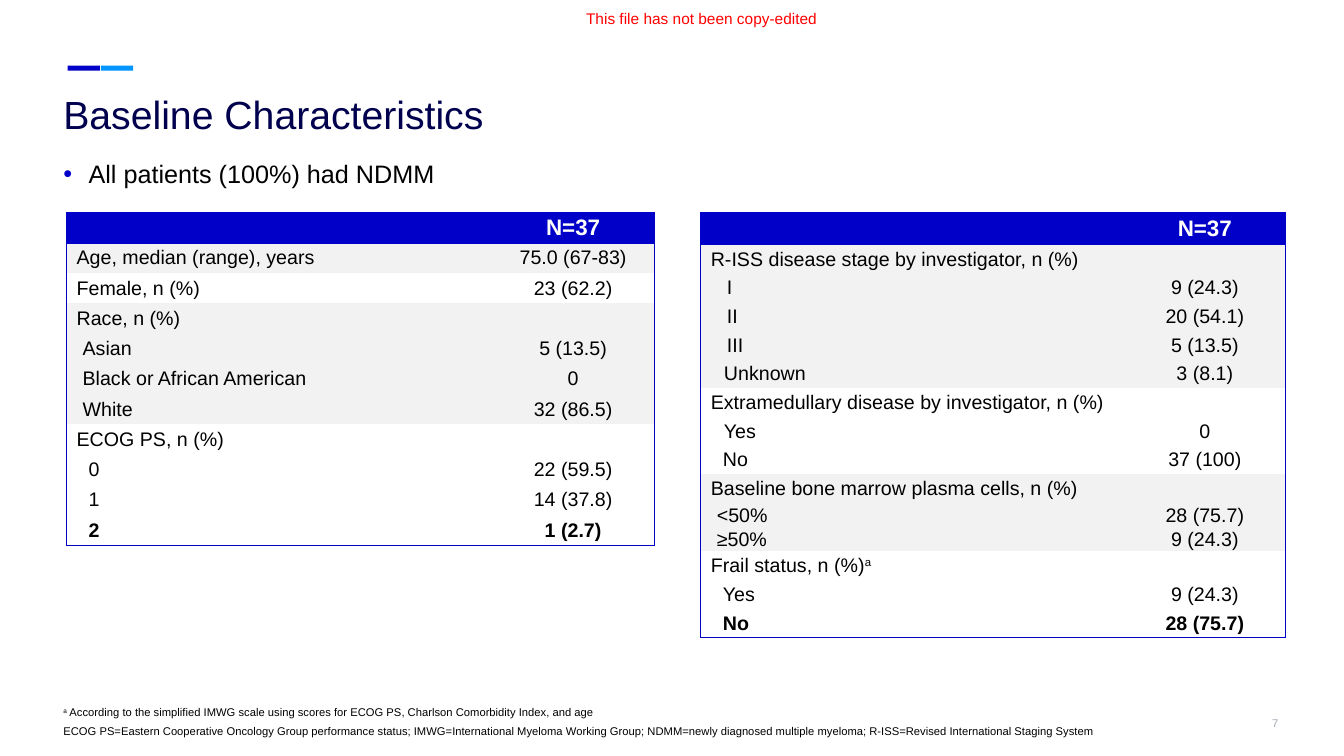
from lxml import etree
from pptx import Presentation
from pptx.dml.color import RGBColor
from pptx.enum.shapes import MSO_SHAPE
from pptx.enum.text import MSO_ANCHOR, PP_ALIGN
from pptx.oxml.ns import qn
from pptx.util import Inches, Pt

RECT = MSO_SHAPE.RECTANGLE
TOP, MIDDLE, BOTTOM = MSO_ANCHOR.TOP, MSO_ANCHOR.MIDDLE, MSO_ANCHOR.BOTTOM
LEFT, CENTER, RIGHT = PP_ALIGN.LEFT, PP_ALIGN.CENTER, PP_ALIGN.RIGHT
PLAIN_STYLE = "{2D5ABB26-0587-4C30-8999-92F81FD0307C}"
COLORS = {
    "blue": "0000C9", "sky": "0095FF", "navy": "00004E", "red": "FF0000",
    "gray": "A1AAB1", "shade": "F2F2F2", "white": "FFFFFF", "black": "000000",
}

# Groups of (label, indent in inches, value); groups alternate in fill.
PATIENTS = [
    [("Age, median (range), years", 0, "75.0 (67-83)")],
    [("Female, n (%)", 0, "23 (62.2)")],
    [("Race, n (%)", 0, ""),
     ("Asian", 0.06, "5 (13.5)"),
     ("Black or African American", 0.06, "0"),
     ("White", 0.06, "32 (86.5)")],
    [("ECOG PS, n (%)", 0, ""),
     ("0", 0.12, "22 (59.5)"),
     ("1", 0.12, "14 (37.8)"),
     ("2", 0.12, "1 (2.7)")],
]
DISEASE = [
    [("R-ISS disease stage by investigator, n (%)", 0, ""),
     ("I", 0.16, "9 (24.3)"),
     ("II", 0.16, "20 (54.1)"),
     ("III", 0.16, "5 (13.5)"),
     ("Unknown", 0.13, "3 (8.1)")],
    [("Extramedullary disease by investigator, n (%)", 0, ""),
     ("Yes", 0.13, "0"),
     ("No", 0.12, "37 (100)")],
    [("Baseline bone marrow plasma cells, n (%)", 0, ""),
     ("<50%", 0.06, "28 (75.7)"),
     ("≥50%", 0.06, "9 (24.3)")],
    [("Frail status, n (%)^a", 0, ""),
     ("Yes", 0.12, "9 (24.3)"),
     ("No", 0.12, "28 (75.7)")],
]
NOTES = [
    "^a^ According to the simplified IMWG scale using scores for ECOG PS, "
    "Charlson Comorbidity Index, and age",
    "ECOG PS=Eastern Cooperative Oncology Group performance status; "
    "IMWG=International Myeloma Working Group; NDMM=newly diagnosed multiple "
    "myeloma; R-ISS=Revised International Staging System",
]


def rgb(name):
    return RGBColor.from_string(COLORS[name])


def write(para, text, size, color, align=LEFT, bold=False):
    """Fill a paragraph; text between carets is superscript."""
    para.alignment = align
    font = para.font
    font.name, font.size, font.bold = "Arial", Pt(size), bold
    font.color.rgb = rgb(color)
    for i, part in enumerate(text.split("^")):
        if part:
            run = para.add_run()
            run.text = part
            if i % 2:
                run._r.get_or_add_rPr().set("baseline", "30000")
    if not text:
        etree.SubElement(para._p, qn("a:endParaRPr"), sz=str(size * 100))


def add_text(slide, box, lines, size, color, align=LEFT, anchor=TOP,
             pad=(0.1, 0.05), gap=0):
    frame = slide.shapes.add_textbox(*map(Inches, box)).text_frame
    frame.word_wrap, frame.vertical_anchor = True, anchor
    frame.margin_left = frame.margin_right = Inches(pad[0])
    frame.margin_top = frame.margin_bottom = Inches(pad[1])
    for i, line in enumerate(lines):
        para = frame.add_paragraph() if i else frame.paragraphs[0]
        para.space_before = Pt(gap)
        write(para, line, size, color, align)
    return frame


def add_bullet(para, color):
    props = para._p.get_or_add_pPr()
    props.set("marL", str(Inches(0.25)))
    props.set("indent", str(Inches(-0.25)))
    tint = etree.Element(qn("a:buClr"))
    etree.SubElement(tint, qn("a:srgbClr"), val=COLORS[color])
    face = etree.Element(qn("a:buFont"), typeface="Arial")
    sign = etree.Element(qn("a:buChar"), char="•")
    base = props.find(qn("a:defRPr"))
    for part in (tint, face, sign):
        base.addprevious(part)


def add_bar(slide, x, color):
    bar = slide.shapes.add_shape(RECT, Inches(x), Inches(0.65),
                                 Inches(0.32), Inches(0.05))
    bar.shadow.inherit = False
    bar.fill.solid()
    bar.fill.fore_color.rgb = rgb(color)
    bar.line.fill.background()


def set_edges(cell, sides):
    """Draw a 1 pt blue border on the given sides and none on the others."""
    props = cell._tc.get_or_add_tcPr()
    for i, side in enumerate("LRTB"):
        line = etree.Element(qn("a:ln" + side), w=str(Pt(1)))
        if side in sides:
            fill = etree.SubElement(line, qn("a:solidFill"))
            etree.SubElement(fill, qn("a:srgbClr"), val=COLORS["blue"])
        else:
            etree.SubElement(line, qn("a:noFill"))
        props.insert(i, line)


def add_table(slide, box, widths, heights, groups):
    rows = [("", 0, "N=37", "blue")]
    for i, group in enumerate(groups):
        fill = "white" if i % 2 else "shade"
        rows += [(*row, fill) for row in group]
    table = slide.shapes.add_table(len(rows), 2, *map(Inches, box)).table
    table.horz_banding = False
    table._tbl.tblPr.find(qn("a:tableStyleId")).text = PLAIN_STYLE
    for col, width in zip(table.columns, widths):
        col.width = Inches(width)
    last = len(rows) - 1
    for r, (label, indent, value, fill) in enumerate(rows):
        table.rows[r].height = Inches(heights[r])
        size, color = (14, "black") if r else (16, "white")
        for c, text in enumerate((label, value)):
            cell = table.cell(r, c)
            cell.vertical_anchor = MIDDLE
            cell.margin_left = Inches(0.1 if c else 0.1 + indent)
            cell.margin_right = Inches(0.1 if c else 0)
            cell.margin_top = cell.margin_bottom = 0
            cell.fill.solid()
            cell.fill.fore_color.rgb = rgb(fill)
            write(cell.text_frame.paragraphs[0], text, size, color,
                  CENTER if c else LEFT, r in (0, last))
            sides = "R" if c else "L"
            sides += "T" if r < 2 else ""
            sides += "B" if r in (0, last) else ""
            set_edges(cell, sides)


def main():
    deck = Presentation()
    deck.slide_width, deck.slide_height = Inches(13.33), Inches(7.5)
    slide = deck.slides.add_slide(deck.slide_layouts[6])

    add_bar(slide, 0.67, "blue")
    add_bar(slide, 1, "sky")
    add_text(slide, (5.46, 0.04, 3, 0.27),
             ["This file has not been copy-edited"], 11, "red", CENTER)
    add_text(slide, (12.01, 6.89, 0.8, 0.57), ["7"], 8, "gray", RIGHT,
             MIDDLE, (0.13, 0.13))
    add_text(slide, (0.53, 0.8, 11.5, 0.67), ["Baseline Characteristics"],
             28, "navy", pad=(0.1, 0.1))
    add_text(slide, (0.53, 6.94, 12, 0.43), NOTES, 8, "black",
             anchor=BOTTOM, gap=4)

    add_table(slide, (0.66, 2.11, 5.83, 3.3), (4.22, 1.61),
              [0.3] * 11, PATIENTS)
    tall = (4.22 - 0.32 - 2 * 0.24) / 12
    add_table(slide, (6.95, 2.11, 5.8, 4.22), (4.2, 1.6),
              [0.32] + [tall] * 9 + [0.24] * 2 + [tall] * 3, DISEASE)

    claim = add_text(slide, (0.53, 1.52, 12.27, 0.39),
                     ["All patients (100%) had NDMM"], 18, "black", gap=6)
    add_bullet(claim.paragraphs[0], "blue")
    deck.save("out.pptx")


if __name__ == "__main__":
    main()
